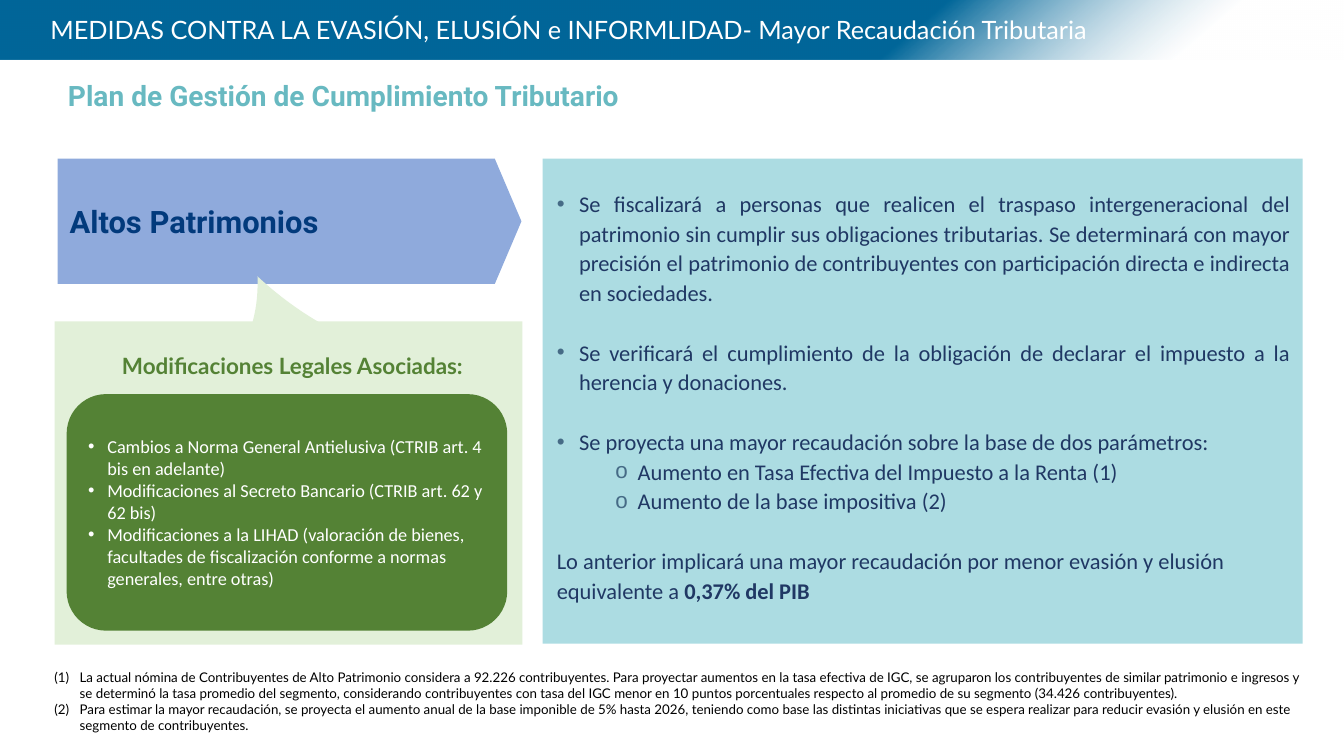
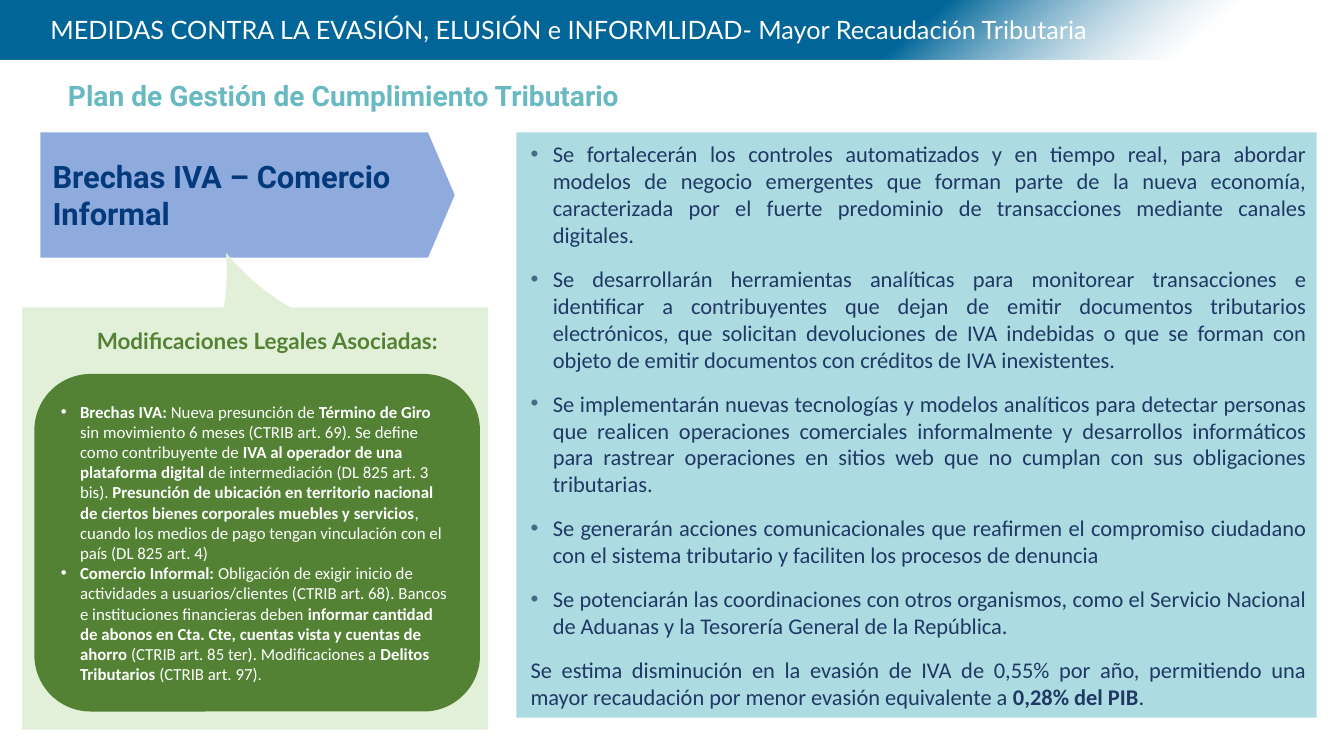
from lxml.etree import SubElement
from pptx import Presentation
from pptx.dml.color import RGBColor
from pptx.enum.shapes import MSO_SHAPE
from pptx.enum.text import MSO_ANCHOR, PP_ALIGN
from pptx.oxml.ns import qn
from pptx.util import Inches, Pt

WHITE = RGBColor(0xFF, 0xFF, 0xFF)
BLACK = RGBColor(0, 0, 0)
BAND_BLUE = RGBColor(0x00, 0x66, 0x99)
AQUA = RGBColor(0xAC, 0xDC, 0xE2)
TEAL = RGBColor(0x68, 0xB9, 0xC1)
ARROW_BLUE = RGBColor(0x8F, 0xAA, 0xDC)
NAVY = RGBColor(0x02, 0x3A, 0x7C)
INK = RGBColor(0x20, 0x38, 0x64)
BULLET_BLUE = RGBColor(0x46, 0x6B, 0x86)
PALE_GREEN = RGBColor(0xE2, 0xF0, 0xD9)
GREEN = RGBColor(0x54, 0x82, 0x35)

SLIDE_WIDTH, SLIDE_HEIGHT = 13.3, 7.48
BLANK_LAYOUT = 6
HEADER = "MEDIDAS CONTRA LA EVASIÓN, ELUSIÓN e INFORMLIDAD- Mayor Recaudación Tributaria"
SUBTITLE = "Plan de Gestión de Cumplimiento Tributario"
CARD_HEADING = "Modificaciones Legales Asociadas:"
LINE_GAP = 21.5


def set_bullet(para, bullet, indent, hanging, color):
    """Add a bullet character, or a (1) style number when bullet is "(1)"."""
    properties = para._p.get_or_add_pPr()
    properties.set("marL", str(Inches(indent)))
    properties.set("indent", str(-Inches(hanging)))
    if color is not None:
        holder = SubElement(properties, qn("a:buClr"))
        SubElement(holder, qn("a:srgbClr"), val=str(color))
    if bullet == "(1)":
        SubElement(properties, qn("a:buAutoNum"), type="arabicParenBoth")
    else:
        SubElement(properties, qn("a:buFont"), typeface="Arial")
        SubElement(properties, qn("a:buChar"), char=bullet)


def write(frame, text, size=16, font="Calibri", color=INK, bold=False,
          align=PP_ALIGN.LEFT, spacing=None, before=0, after=0,
          bullet=None, indent=0.22, hanging=0.22, bullet_color=None):
    """Add one paragraph; double asterisks switch bold on and off."""
    para = frame.paragraphs[0]
    if para.runs:
        para = frame.add_paragraph()
    if bullet:
        set_bullet(para, bullet, indent, hanging, bullet_color)
    para.alignment = align
    para.space_before, para.space_after = Pt(before), Pt(after)
    if spacing:
        para.line_spacing = spacing
    for number, part in enumerate(text.split("**")):
        if part:
            span = para.add_run()
            span.text = part
            span.font.size, span.font.name = Pt(size), font
            span.font.color.rgb = color
            span.font.bold = bold or number % 2 == 1


class Slides:
    def __init__(self):
        self.deck = Presentation()
        self.deck.slide_width = Inches(SLIDE_WIDTH)
        self.deck.slide_height = Inches(SLIDE_HEIGHT)
        self.page = None

    def start_page(self):
        layout = self.deck.slide_layouts[BLANK_LAYOUT]
        self.page = self.deck.slides.add_slide(layout)
        self.band()
        title = self.text_box(0.4, 0.09, 11.85, 0.42)
        write(title, HEADER, size=18, font="Lato", color=WHITE)
        subtitle = self.text_box(-0.17, 0.72, 7.14, 0.45, (0.12, 0.06, 0.12, 0.06))
        write(subtitle, SUBTITLE, size=20, font="Roboto", color=TEAL, bold=True,
              align=PP_ALIGN.CENTER)

    def frame(self, box, insets, anchor):
        frame = box.text_frame
        frame.word_wrap = True
        frame.vertical_anchor = anchor
        (frame.margin_left, frame.margin_top,
         frame.margin_right, frame.margin_bottom) = map(Inches, insets)
        return frame

    def text_box(self, left, top, width, height, insets=(0.1, 0.05, 0.1, 0.05)):
        box = self.page.shapes.add_textbox(*map(Inches, (left, top, width, height)))
        return self.frame(box, insets, MSO_ANCHOR.TOP)

    def shape(self, kind, bounds, fill=None):
        shape = self.page.shapes.add_shape(kind, *map(Inches, bounds))
        shape.shadow.inherit = False
        shape.line.fill.background()
        if fill is not None:
            shape.fill.solid()
            shape.fill.fore_color.rgb = fill
        return shape

    def block(self, kind, bounds, fill, insets=(0.1, 0.05, 0.1, 0.05)):
        """Draw a filled shape and return its vertically centred text frame."""
        return self.frame(self.shape(kind, bounds, fill), insets, MSO_ANCHOR.MIDDLE)

    def band(self):
        band = self.shape(MSO_SHAPE.RECTANGLE, (0, 0, SLIDE_WIDTH, 0.59))
        band.fill.gradient()
        band.fill.gradient_angle = 310
        stops = zip(band.fill.gradient_stops, (0.67, 0.88), (BAND_BLUE, WHITE))
        for stop, position, color in stops:
            stop.position = position
            stop.color.rgb = color
        last_color = band.element.spPr.findall(".//" + qn("a:srgbClr"))[-1]
        SubElement(last_color, qn("a:alpha"), val="42000")

    def arrow(self, bounds, text):
        shape = self.shape(MSO_SHAPE.PENTAGON, bounds, ARROW_BLUE)
        shape.adjustments[0] = 0.213
        frame = self.frame(shape, (0.12, 0.06, 0.12, 0.06), MSO_ANCHOR.MIDDLE)
        write(frame, text, size=22, font="Roboto", color=NAVY, bold=True)

    def pointer(self, bounds, rotation, stretch):
        drop = self.shape(MSO_SHAPE.TEAR, bounds, PALE_GREEN)
        drop.adjustments[0] = stretch
        drop.rotation = rotation
        drop.element.spPr.find(qn("a:xfrm")).set("flipH", "1")

    def law_card(self, card, heading, body, items, size):
        self.shape(MSO_SHAPE.RECTANGLE, card, PALE_GREEN)
        write(self.text_box(*heading), CARD_HEADING, font="Lato", color=GREEN,
              bold=True, align=PP_ALIGN.CENTER, spacing=1.2, after=2)
        frame = self.block(MSO_SHAPE.ROUNDED_RECTANGLE, body, GREEN)
        for item in items:
            write(frame, item, size=size, color=WHITE, bullet="•",
                  indent=0.19, hanging=0.19)

    def panel(self, bounds, insets):
        return self.block(MSO_SHAPE.RECTANGLE, bounds, AQUA, insets)

    def numbered_list(self, bounds, items):
        frame = self.text_box(*bounds)
        for item in items:
            write(frame, item, size=9.5, font="Lato", color=BLACK, bullet="(1)",
                  indent=0.25, hanging=0.25)


def add_wealth_page(slides):
    slides.start_page()
    panel = slides.panel((5.37, 1.57, 7.52, 4.8), (0.14, 0.06, 0.12, 0.17))
    point = dict(align=PP_ALIGN.JUSTIFY, spacing=1.1, bullet="•",
                 bullet_color=BULLET_BLUE)
    points = [
        "Se fiscalizará a personas que realicen el traspaso intergeneracional del "
        "patrimonio sin cumplir sus obligaciones tributarias. Se determinará con mayor "
        "precisión el patrimonio de contribuyentes con participación directa e "
        "indirecta en sociedades.",
        "Se verificará el cumplimiento de la obligación de declarar el impuesto a la "
        "herencia y donaciones.",
        "Se proyecta una mayor recaudación sobre la base de dos parámetros:",
    ]
    for number, text in enumerate(points):
        write(panel, text, before=LINE_GAP if number else 0, **point)
    for text in ("Aumento en Tasa Efectiva del Impuesto a la Renta (1)",
                 "Aumento de la base impositiva (2)"):
        write(panel, text, **{**point, "bullet": "o", "indent": 0.8})
    write(panel, "Lo anterior implicará una mayor recaudación por menor evasión y "
          "elusión equivalente a **0,37% del PIB**", spacing=1.1, before=LINE_GAP)

    slides.arrow((0.57, 1.57, 4.59, 1.24), "Altos Patrimonios")
    slides.pointer((2.33, 3.22, 1.5, 1.07), 27, 1.249)
    slides.law_card((0.54, 3.18, 4.63, 3.2), (0.58, 3.38, 4.63, 0.44),
                    (0.66, 3.9, 4.36, 2.34), [
        "Cambios a Norma General Antielusiva (CTRIB art. 4 bis en adelante)",
        "Modificaciones al Secreto Bancario (CTRIB art. 62 y 62 bis)",
        "Modificaciones a la LIHAD (valoración de bienes, facultades de fiscalización "
        "conforme a normas generales, entre otras)",
    ], size=13)
    slides.numbered_list((0.44, 6.57, 12.64, 0.74), [
        "La actual nómina de Contribuyentes de Alto Patrimonio considera a 92.226 "
        "contribuyentes. Para proyectar aumentos en la tasa efectiva de IGC, se "
        "agruparon los contribuyentes de similar patrimonio e ingresos y se determinó "
        "la tasa promedio del segmento, considerando contribuyentes con tasa del IGC "
        "menor en 10 puntos porcentuales respecto al promedio de su segmento (34.426 "
        "contribuyentes).",
        "Para estimar la mayor recaudación, se proyecta el aumento anual de la base "
        "imponible de 5% hasta 2026, teniendo como base las distintas iniciativas que "
        "se espera realizar para reducir evasión y elusión en este segmento de "
        "contribuyentes.",
    ])


def add_vat_page(slides):
    slides.start_page()
    panel = slides.panel((5.11, 1.31, 7.92, 5.79), (0.14, 0.05, 0.1, 0.05))
    for text in [
        "Se fortalecerán los controles automatizados y en tiempo real, para abordar "
        "modelos de negocio emergentes que forman parte de la nueva economía, "
        "caracterizada por el fuerte predominio de transacciones mediante canales "
        "digitales.",
        "Se desarrollarán herramientas analíticas para monitorear transacciones e "
        "identificar a contribuyentes que dejan de emitir documentos tributarios "
        "electrónicos, que solicitan devoluciones de IVA indebidas o que se forman con "
        "objeto de emitir documentos con créditos de IVA inexistentes.",
        "Se implementarán nuevas tecnologías y modelos analíticos para detectar "
        "personas que realicen operaciones comerciales informalmente y desarrollos "
        "informáticos para rastrear operaciones en sitios web que no cumplan con sus "
        "obligaciones tributarias.",
        "Se generarán acciones comunicacionales que reafirmen el compromiso ciudadano "
        "con el sistema tributario y faciliten los procesos de denuncia",
        "Se potenciarán las coordinaciones con otros organismos, como el Servicio "
        "Nacional de Aduanas y la Tesorería General de la República.",
    ]:
        write(panel, text, align=PP_ALIGN.JUSTIFY, after=12, bullet="•",
              bullet_color=BULLET_BLUE)
    write(panel, "Se estima disminución en la evasión de IVA de 0,55% por año, "
          "permitiendo una mayor recaudación por menor evasión equivalente a "
          "**0,28% del PIB**.", align=PP_ALIGN.JUSTIFY, after=12)

    slides.arrow((0.4, 1.31, 4.1, 1.24), "Brechas IVA – Comercio Informal")
    slides.pointer((2.02, 3.07, 1.49, 1.4), 24.2, 1.345)
    slides.law_card((0.22, 3.04, 4.61, 4.18), (0.34, 3.13, 4.61, 0.57),
                    (0.34, 3.7, 4.41, 3.34), [
        "**Brechas IVA: **Nueva presunción de **Término de Giro **sin movimiento 6 "
        "meses (CTRIB art. 69). Se define como contribuyente de **IVA al operador de "
        "una plataforma digital **de intermediación (DL 825 art. 3 bis). **Presunción "
        "de ubicación en territorio nacional de ciertos bienes corporales muebles y "
        "servicios**, cuando los medios de pago tengan vinculación con el país "
        "(DL 825 art. 4)",
        "**Comercio Informal: **Obligación de exigir inicio de actividades a "
        "usuarios/clientes (CTRIB art. 68). Bancos e instituciones financieras deben "
        "**informar cantidad de abonos en Cta. Cte, cuentas vista y cuentas de ahorro "
        "**(CTRIB art. 85 ter). Modificaciones a **Delitos Tributarios** (CTRIB art. "
        "97).",
    ], size=12)


def main():
    slides = Slides()
    add_wealth_page(slides)
    add_vat_page(slides)
    slides.deck.save("out.pptx")


if __name__ == "__main__":
    main()
